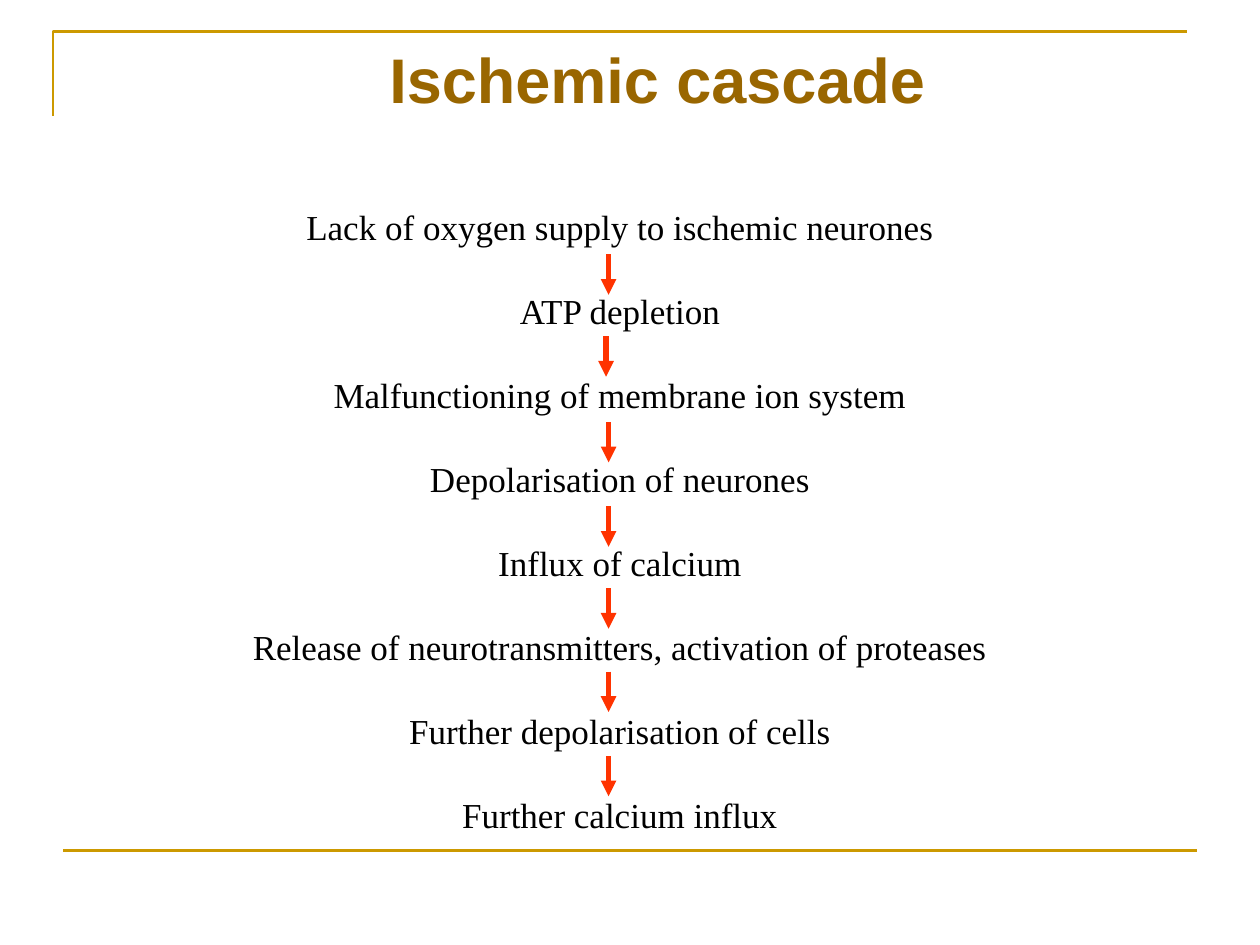
from lxml.etree import SubElement
from pptx import Presentation
from pptx.dml.color import RGBColor
from pptx.enum.shapes import MSO_CONNECTOR as Connector
from pptx.enum.text import MSO_ANCHOR as Anchor, MSO_AUTO_SIZE as AutoSize, PP_ALIGN as Align
from pptx.oxml.ns import qn
from pptx.util import Inches, Pt

GOLD = RGBColor(0xCC, 0x99, 0x00)
BROWN = RGBColor(0x99, 0x66, 0x00)
BLACK = RGBColor(0, 0, 0)
RED = RGBColor(0xFF, 0x33, 0x00)

STEPS = [
    "Lack of oxygen supply to ischemic neurones",
    "ATP depletion",
    "Malfunctioning of membrane ion system",
    "Depolarisation of neurones",
    "Influx of calcium",
    "Release of neurotransmitters, activation of proteases",
    "Further depolarisation of cells",
    "Further calcium influx",
]
ARROW_STARTS = [
    (4.83, 2.02), (4.81, 2.67), (4.83, 3.35), (4.83, 4.02),
    (4.83, 4.67), (4.83, 5.33), (4.83, 6),
]
ARROW_LENGTH = 0.32


def write_text(para, text, font, size, color, bold=False, align=Align.LEFT, after=0):
    para.alignment = align
    para.space_before = Pt(0)
    para.space_after = Pt(after)
    span = para.add_run()
    span.text = text
    span.font.name = font
    span.font.size = Pt(size)
    span.font.bold = bold
    span.font.color.rgb = color


class CascadeSlide:
    title_style = dict(font="Arial", size=36, color=BROWN, bold=True)
    step_style = dict(font="Times New Roman", size=20, color=BLACK, align=Align.CENTER, after=24)

    def __init__(self, deck):
        self.page = deck.slides.add_slide(deck.slide_layouts[1])

    def place(self, box, left, top, width, height, wrap):
        box.left, box.top = Inches(left), Inches(top)
        box.width, box.height = Inches(width), Inches(height)
        frame = box.text_frame
        frame.word_wrap = wrap
        frame.auto_size = AutoSize.NONE
        frame.vertical_anchor = Anchor.TOP
        return frame

    def title(self, text):
        frame = self.place(self.page.shapes.title, 2.99, 0.27, 4.49, 0.71, False)
        write_text(frame.paragraphs[0], text, **self.title_style)

    def steps(self, texts):
        frame = self.place(self.page.placeholders[1], 0.42, 1.58, 9, 5.15, True)
        for index, text in enumerate(texts):
            para = frame.add_paragraph() if index else frame.paragraphs[0]
            write_text(para, text, **self.step_style)
            props = para._p.get_or_add_pPr()
            props.set("marL", "0")
            props.set("indent", "0")
            SubElement(props, qn("a:buNone"))

    def frame_corner(self):
        builder = self.page.shapes.build_freeform(Inches(0.42), Inches(0.92))
        builder.add_line_segments(
            [(Inches(0.42), Inches(0.25)), (Inches(9.42), Inches(0.25))], close=False
        )
        corner = builder.convert_to_shape()
        corner.shadow.inherit = False
        corner.fill.background()
        corner.line.color.rgb = GOLD
        corner.line.width = Pt(1.5)

    def line(self, start, end, color, width, arrow=False):
        line = self.page.shapes.add_connector(
            Connector.STRAIGHT, *(Inches(value) for value in (*start, *end))
        )
        line.line.color.rgb = color
        line.line.width = Pt(width)
        if arrow:
            SubElement(line.line._get_or_add_ln(), qn("a:tailEnd"), type="triangle")
        SubElement(line._element.spPr, qn("a:effectLst"))


def main():
    deck = Presentation()
    deck.slide_width, deck.slide_height = Inches(10), Inches(7.5)
    slide = CascadeSlide(deck)
    slide.frame_corner()
    slide.line((0.5, 6.75), (9.5, 6.75), GOLD, 1.5)
    slide.title("Ischemic cascade")
    slide.steps(STEPS)
    for x, top in ARROW_STARTS:
        slide.line((x, top), (x, top + ARROW_LENGTH), RED, 3, arrow=True)
    deck.save("out.pptx")


if __name__ == "__main__":
    main()
